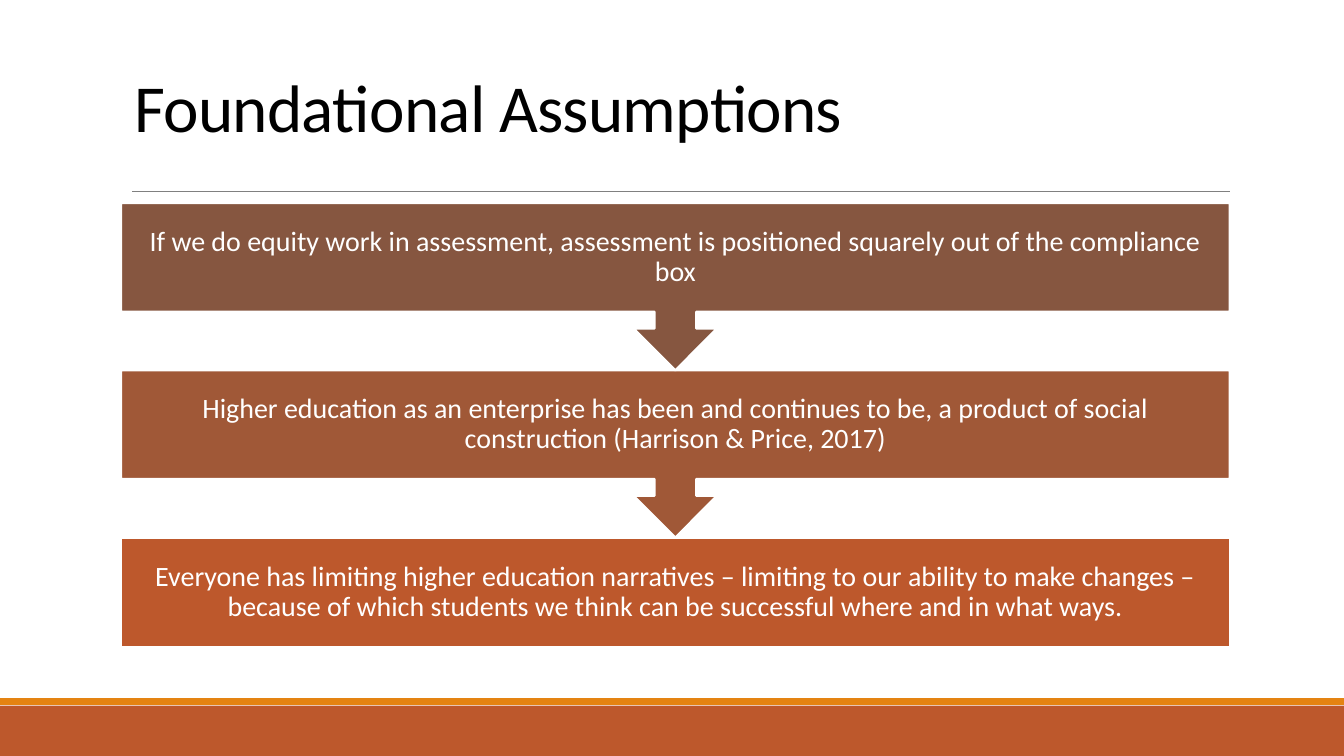
from dataclasses import dataclass

from lxml import etree
from pptx import Presentation
from pptx.dml.color import RGBColor
from pptx.enum import shapes, text
from pptx.oxml.ns import qn
from pptx.util import Pt

FONT = "Calibri"
COLORS = {
    "rust": "BD582C",
    "orange": "E48312",
    "sienna": "A05837",
    "brown": "865640",
    "gray": "808080",
    "black": "000000",
    "white": "FFFFFF",
}
WIDTH, HEIGHT = 720, 405
LEFT, CONTENT_WIDTH = 64.8, 594
FIRST_TOP, STEP, LAST_HEIGHT = 108.8, 89.6, 59


@dataclass(frozen=True)
class Band:
    top: float
    height: float
    color: str


@dataclass(frozen=True)
class Assumption:
    statement: str
    color: str


FOOTER_BANDS = (Band(378, 27, "rust"), Band(374, 3.6, "orange"))
ASSUMPTIONS = (
    Assumption("If we do equity work in assessment, assessment is positioned "
               "squarely out of the compliance box", "brown"),
    Assumption("Higher education as an enterprise has been and continues to be, "
               "a product of social construction (Harrison & Price, 2017)", "sienna"),
    Assumption("Everyone has limiting higher education narratives – limiting to our "
               "ability to make changes – because of which students we think can be "
               "successful where and in what ways.", "rust"),
)


def rgb(name: str) -> RGBColor:
    return RGBColor.from_string(COLORS[name])


def add_text(paragraph, words: str, size: float, color: str):
    run = paragraph.add_run()
    run.text = words
    run.font.name = FONT
    run.font.size = Pt(size)
    run.font.color.rgb = rgb(color)
    return run


def add_filled(slide, kind, left: float, top: float, width: float,
               height: float, color: str):
    shape = slide.shapes.add_shape(kind, Pt(left), Pt(top), Pt(width), Pt(height))
    shape.shadow.inherit = False
    shape.fill.solid()
    shape.fill.fore_color.rgb = rgb(color)
    shape.line.fill.background()
    return shape


def add_rule(slide) -> None:
    rule = slide.shapes.add_connector(
        shapes.MSO_CONNECTOR.STRAIGHT, Pt(70.8), Pt(102.7), Pt(659), Pt(102.7))
    rule.line.color.rgb = rgb("gray")
    rule.line.width = Pt(0.5)
    etree.SubElement(rule._element.spPr, qn("a:effectLst"))


def format_title(slide, words: str) -> None:
    title = slide.shapes.title
    title.left, title.top = Pt(LEFT), Pt(17.3)
    title.width, title.height = Pt(CONTENT_WIDTH), Pt(85.7)
    frame = title.text_frame
    frame.word_wrap = True
    frame.vertical_anchor = text.MSO_ANCHOR.MIDDLE
    paragraph = frame.paragraphs[0]
    paragraph.alignment = text.PP_ALIGN.LEFT
    paragraph.line_spacing = 0.85
    heading = add_text(paragraph, words, 36, "black")
    heading.font._element.set("spc", "-40")


def add_assumption(slide, index: int, assumption: Assumption) -> None:
    """Draw one step; all but the last point down to the next."""
    is_last = index == len(ASSUMPTIONS) - 1
    kind = (shapes.MSO_SHAPE.RECTANGLE if is_last
            else shapes.MSO_SHAPE.DOWN_ARROW_CALLOUT)
    step = add_filled(slide, kind, LEFT, FIRST_TOP + index * STEP, CONTENT_WIDTH,
                      LAST_HEIGHT if is_last else STEP, assumption.color)
    step.line.color.rgb = rgb("white")
    step.line.width = Pt(1.25)
    frame = step.text_frame
    frame.word_wrap = True
    frame.vertical_anchor = text.MSO_ANCHOR.MIDDLE
    frame.margin_left = frame.margin_right = Pt(8.5)
    frame.margin_top = frame.margin_bottom = Pt(8.5)
    paragraph = frame.paragraphs[0]
    paragraph.alignment = text.PP_ALIGN.CENTER
    paragraph.line_spacing = 0.9
    add_text(paragraph, assumption.statement, 15, "white")


def main() -> None:
    deck = Presentation()
    deck.slide_width, deck.slide_height = Pt(WIDTH), Pt(HEIGHT)
    slide = deck.slides.add_slide(deck.slide_layouts.get_by_name("Title Only"))
    for band in FOOTER_BANDS:
        add_filled(slide, shapes.MSO_SHAPE.RECTANGLE, 0, band.top, WIDTH,
                   band.height, band.color)
    add_rule(slide)
    format_title(slide, "Foundational Assumptions")
    # Later steps go first, so each arrow tip lies over the box below it.
    for index, assumption in reversed(list(enumerate(ASSUMPTIONS))):
        add_assumption(slide, index, assumption)
    deck.save("out.pptx")


if __name__ == "__main__":
    main()
